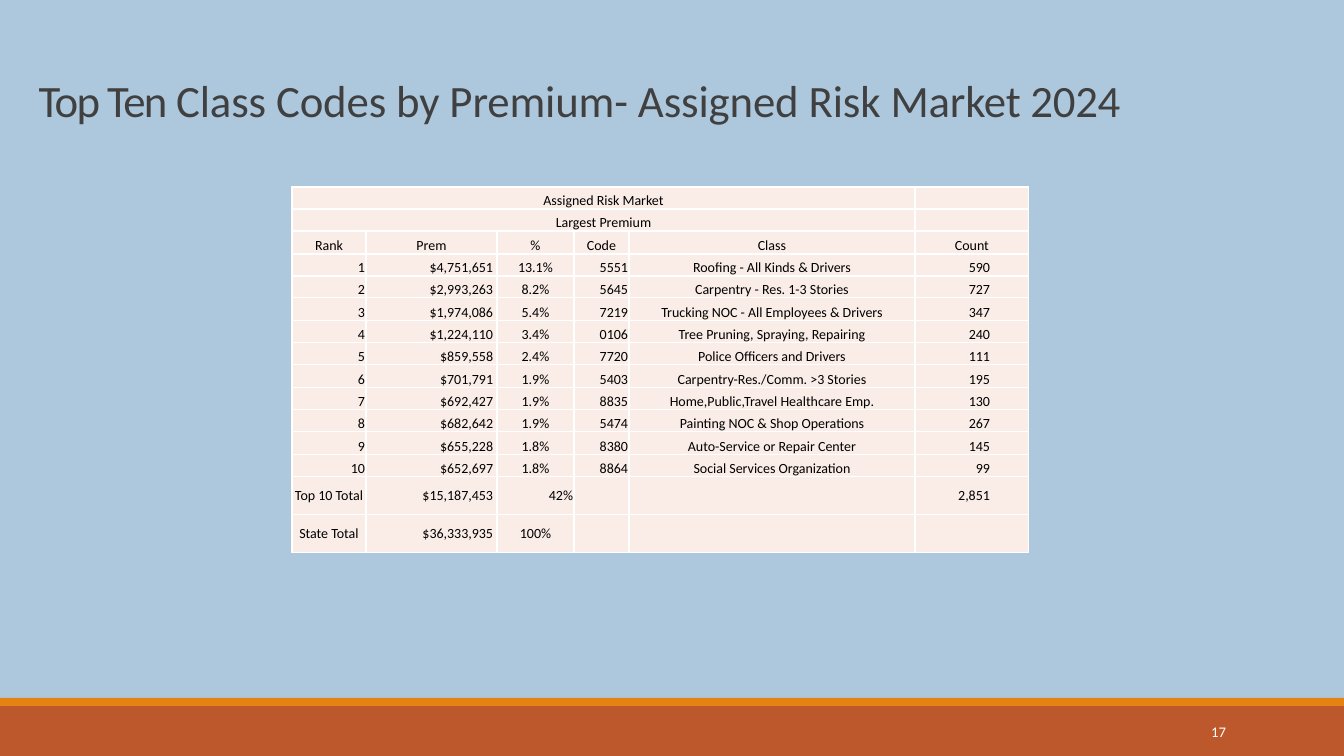
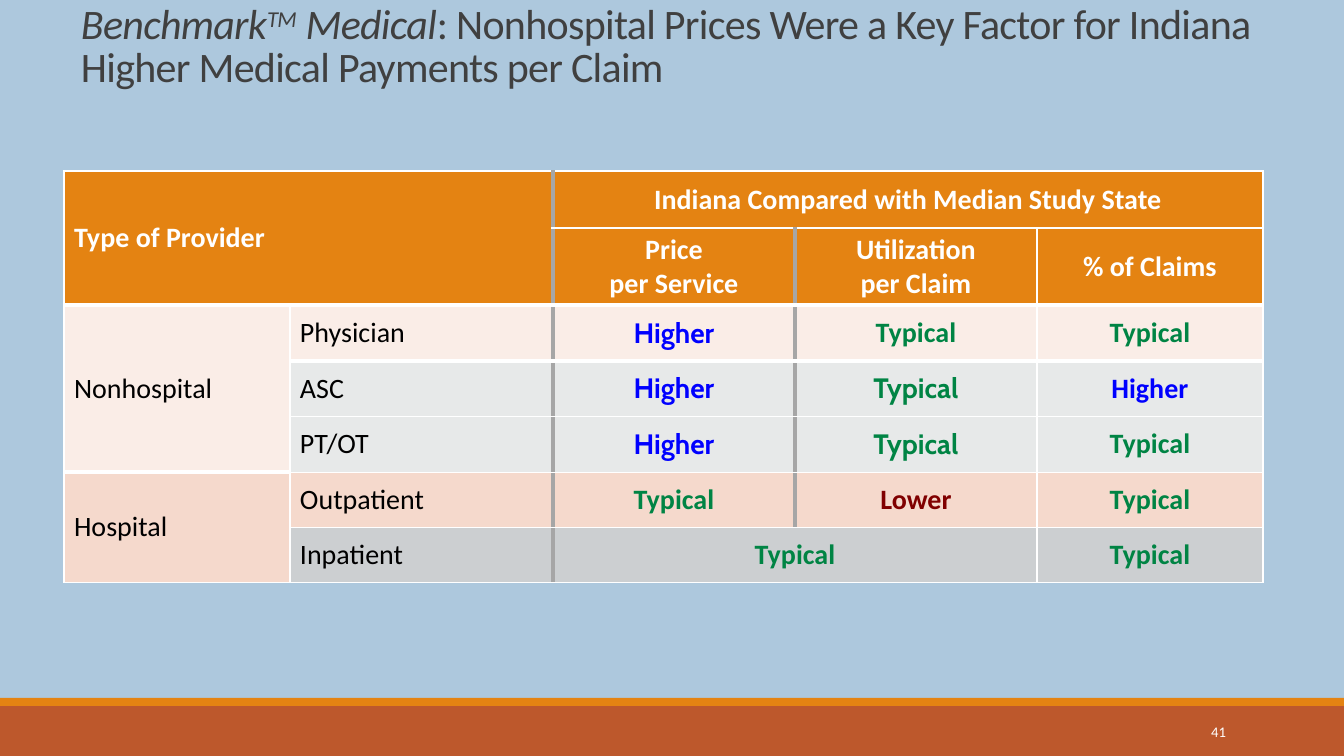
from lxml import etree
from pptx import Presentation
from pptx.dml.color import RGBColor
from pptx.enum.shapes import MSO_SHAPE
from pptx.enum.text import MSO_ANCHOR, PP_ALIGN
from pptx.oxml.ns import qn
from pptx.util import Pt

PX = 9072  # EMU in one px
WIDE, HIGH = 1344, 756
LEFT, MID, RIGHT = PP_ALIGN.LEFT, PP_ALIGN.CENTER, PP_ALIGN.RIGHT
TOP, CENTER, BASE = MSO_ANCHOR.TOP, MSO_ANCHOR.MIDDLE, MSO_ANCHOR.BOTTOM
RECT = MSO_SHAPE.RECTANGLE

SKY, RUST, ORANGE, INK = "ADC8DD", "BD582C", "E48312", "404040"
WHITE, BLACK, GREY, BLUSH = "FFFFFF", "000000", "A6A6A6", "FAEDE7"
THIN, THICK, RULE = (WHITE, 1), (WHITE, 3), (GREY, 3)
rgb = RGBColor.from_string


def write(par, text, size=20, color=BLACK, bold=False, italic=False,
          font="Calibri", track=0, lift=0):
    if not text:
        etree.SubElement(par._p, qn("a:endParaRPr"), sz=str(size * 100))
        return
    run = par.add_run()
    run.text = text
    run.font.size, run.font.name = Pt(size), font
    run.font.bold, run.font.italic = bold, italic
    run.font.color.rgb = rgb(color)
    mark = run.font._element
    if track:
        mark.set("spc", str(track))
    if lift:
        mark.set("baseline", str(lift * 1000))


def dress(cell, text, fill, edges, align, anchor, pads, **style):
    """Give a table cell its borders, fill, padding and text."""
    props = cell._tc.get_or_add_tcPr()
    if not cell.is_spanned:
        for side, (color, width) in zip("LRTB", edges):
            line = etree.SubElement(props, qn("a:ln" + side), w=str(Pt(width)))
            solid = etree.SubElement(line, qn("a:solidFill"))
            etree.SubElement(solid, qn("a:srgbClr"), val=color)
    cell.fill.solid()
    cell.fill.fore_color.rgb = rgb(fill)
    cell.vertical_anchor = anchor
    (cell.margin_left, cell.margin_top,
     cell.margin_right, cell.margin_bottom) = [n * PX for n in pads]
    frame = cell.text_frame
    for i, part in enumerate(text.split("\n")):
        par = frame.add_paragraph() if i else frame.paragraphs[0]
        par.alignment = align
        write(par, part, **style)


# Pages: number, title box, title format, title runs, table place and grid
pages = [
    dict(num="17", box=(0, 20, 1159, 166), pads=(0, 1, 0, 0),
         align=MID, anchor=CENTER,
         runs=[("Top Ten ", dict(size=32, track=-120)),
               ("Class Codes by Premium- Assigned Risk ", dict(size=32, track=-10)),
               ("Market 2024", dict(size=32, track=-20))],
         at=(292, 187), cols=[74, 131, 77, 55, 286, 114],
         rows=[22, 22, 23] * 4 + [22, 38, 38]),
    dict(num="41", box=(71, 0, 1207, 144), pads=(10, 5, 10, 5),
         align=LEFT, anchor=TOP,
         runs=[("Benchmark", dict(size=30, track=-50, italic=True)),
               ("TM", dict(size=28, track=-50, italic=True, lift=30)),
               (" Medical", dict(size=30, track=-50, italic=True)),
               (": Nonhospital Prices Were a Key Factor for Indiana "
                "Higher Medical Payments per Claim", dict(size=30, track=-50))],
         at=(64, 171), cols=[226, 263, 242, 242, 226],
         rows=[57, 77, 56, 55, 56, 55, 55]),
]

deck = Presentation()
deck.slide_width, deck.slide_height = WIDE * PX, HIGH * PX
grids = []

for page in pages:
    slide = deck.slides.add_slide(deck.slide_layouts[6])
    back = slide.background.fill
    back.solid()
    back.fore_color.rgb = rgb(SKY)

    # Footer bands
    for top, tall, color in ((706, 50, RUST), (698, 8, ORANGE)):
        band = slide.shapes.add_shape(RECT, 0, top * PX, WIDE * PX, tall * PX)
        band.shadow.inherit = False
        band.fill.solid()
        band.fill.fore_color.rgb = rgb(color)
        band.line.fill.background()

    # Page number and title
    for box, pads, align, anchor, space, runs in (
            ((1092, 712, 144, 40), (10, 5, 10, 5), RIGHT, CENTER, Pt(12.4),
             [(page["num"], dict(size=10.5, color=WHITE))]),
            (page["box"], page["pads"], page["align"], page["anchor"], 0.85,
             [(text, dict(color=INK, **style)) for text, style in page["runs"]])):
        frame = slide.shapes.add_textbox(*[n * PX for n in box]).text_frame
        frame.word_wrap = True
        frame.vertical_anchor = anchor
        (frame.margin_left, frame.margin_top,
         frame.margin_right, frame.margin_bottom) = [n * PX for n in pads]
        par = frame.paragraphs[0]
        par.alignment, par.line_spacing = align, space
        for text, style in runs:
            write(par, text, **style)

    # Empty table
    cols, rows = page["cols"], page["rows"]
    sizes = (*page["at"], sum(cols), sum(rows))
    grid = slide.shapes.add_table(len(rows), len(cols),
                                  *[n * PX for n in sizes]).table
    grid.first_row = grid.horz_banding = False
    for col, wide in zip(grid.columns, cols):
        col.width = wide * PX
    for row, tall in zip(grid.rows, rows):
        row.height = tall * PX
    grids.append(grid)

prem, price = grids

# Premium table
data = [
    ("Assigned Risk Market", "", "", "", "", ""),
    ("Largest Premium", "", "", "", "", ""),
    ("Rank", "Prem", "%", "Code", "Class", "Count"),
    ("1", "$4,751,651", "13.1%", "5551", "Roofing - All Kinds & Drivers", "590"),
    ("2", "$2,993,263", "8.2%", "5645", "Carpentry - Res. 1-3 Stories", "727"),
    ("3", "$1,974,086", "5.4%", "7219", "Trucking NOC - All Employees & Drivers", "347"),
    ("4", "$1,224,110", "3.4%", "0106", "Tree Pruning, Spraying, Repairing", "240"),
    ("5", "$859,558", "2.4%", "7720", "Police Officers and Drivers", "111"),
    ("6", "$701,791", "1.9%", "5403", "Carpentry-Res./Comm. >3 Stories", "195"),
    ("7", "$692,427", "1.9%", "8835", "Home,Public,Travel Healthcare Emp.", "130"),
    ("8", "$682,642", "1.9%", "5474", "Painting NOC & Shop Operations", "267"),
    ("9", "$655,228", "1.8%", "8380", "Auto-Service or Repair Center", "145"),
    ("10", "$652,697", "1.8%", "8864", "Social Services Organization", "99"),
    ("Top 10 Total", "$15,187,453", "42%", "", "", "2,851"),
    ("State Total", "$36,333,935", "100%", "", "", ""),
]
HEAD, TOTAL = 3, 13  # first body row, first total row
sides = [RIGHT, RIGHT, MID, RIGHT, MID, RIGHT]
gaps = [1, 4, 1, 1, 1, 39]
for r in (0, 1):
    prem.cell(r, 0).merge(prem.cell(r, 4))
for r, row in enumerate(data):
    for c, text in enumerate(row):
        align, gap = (MID, 1) if r < HEAD else (sides[c], gaps[c])
        if r >= TOTAL and c == 0:
            align = MID
        elif text == "42%":
            align = RIGHT
        dress(prem.cell(r, c), text, BLUSH, [THIN] * 4, align,
              CENTER if r >= TOTAL else BASE, (1, 1, gap, 0), size=10)

# Price comparison table
data = [
    ("Type of Provider", "", "Indiana Compared with Median Study State", "", ""),
    ("", "", "Price\nper Service", "Utilization\nper Claim", "% of Claims"),
    ("Nonhospital", "Physician", "Higher", "Typical", "Typical"),
    ("", "ASC", "Higher", "Typical", "Higher"),
    ("", "PT/OT", "Higher", "Typical", "Typical"),
    ("Hospital", "Outpatient", "Typical", "Lower", "Typical"),
    ("", "Inpatient", "Typical", "", "Typical"),
]
fills = [ORANGE, ORANGE, BLUSH, "E7E9E9", "E7E9E9", "F5D9CC", "CCCFD1"]
tones = {"Higher": "0000FF", "Typical": "008444", "Lower": "800000"}
cabin = {(2, 2), (3, 2), (4, 2), (3, 3), (4, 3)}
for r, c, end, last in ((0, 0, 1, 1), (0, 2, 0, 4), (2, 0, 4, 0),
                        (5, 0, 6, 0), (6, 2, 6, 3)):
    price.cell(r, c).merge(price.cell(end, last))
for r, row in enumerate(data):
    split = 0 < r < 6  # rows where price and utilization stand apart
    for c, text in enumerate(row):
        first = (r, c) == (0, 0)
        edges = [
            RULE if c == 2 or c == 3 and split else THIN,
            RULE if first or c == 1 or c == 2 and split else THIN,
            THICK if r == 2 or r == 3 and c or r == 5 and c == 0 else THIN,
            THICK if first or r in (1, 2) else THIN,
        ]
        dress(price.cell(r, c), text, fills[r], edges,
              MID if c > 1 else LEFT, CENTER, (10, 5, 10, 5),
              color=WHITE if r < 2 else tones.get(text, BLACK),
              bold=r < 2 or c > 1,
              font="Cabin" if (r, c) in cabin else "Calibri")

deck.save("out.pptx")
